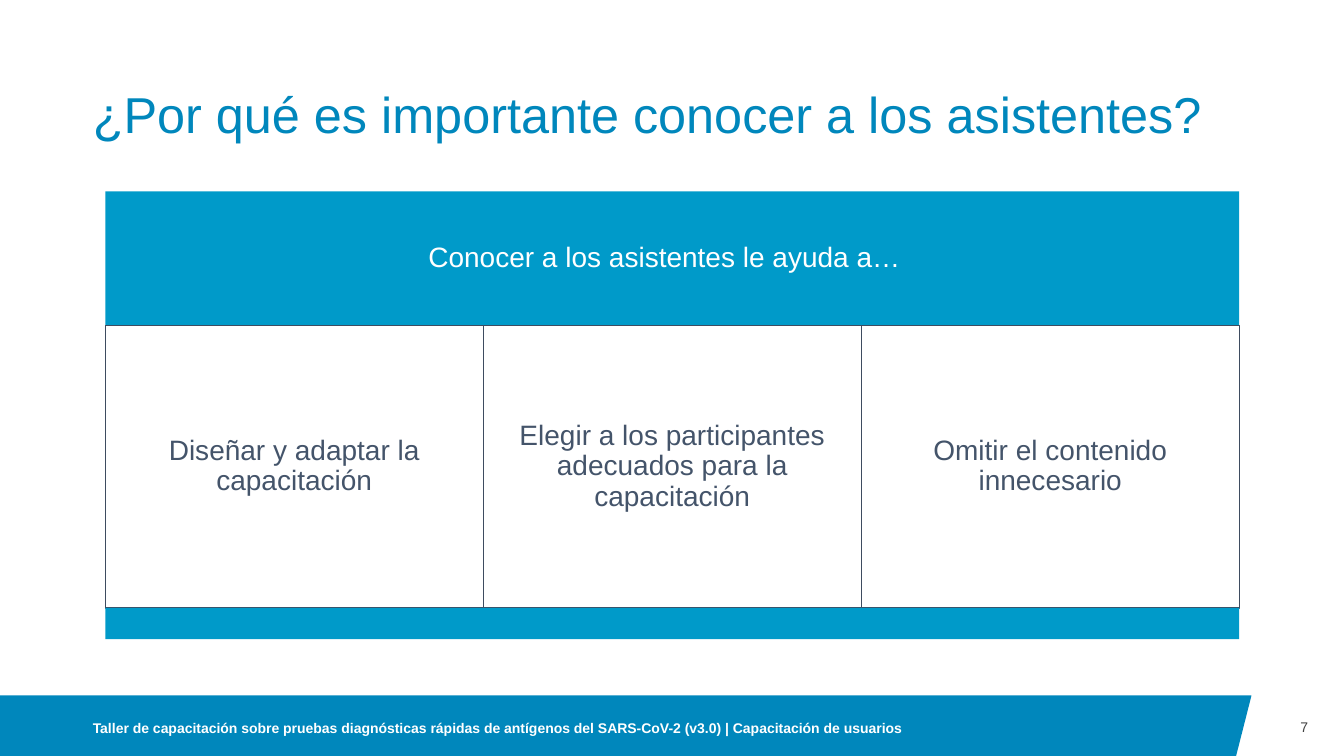
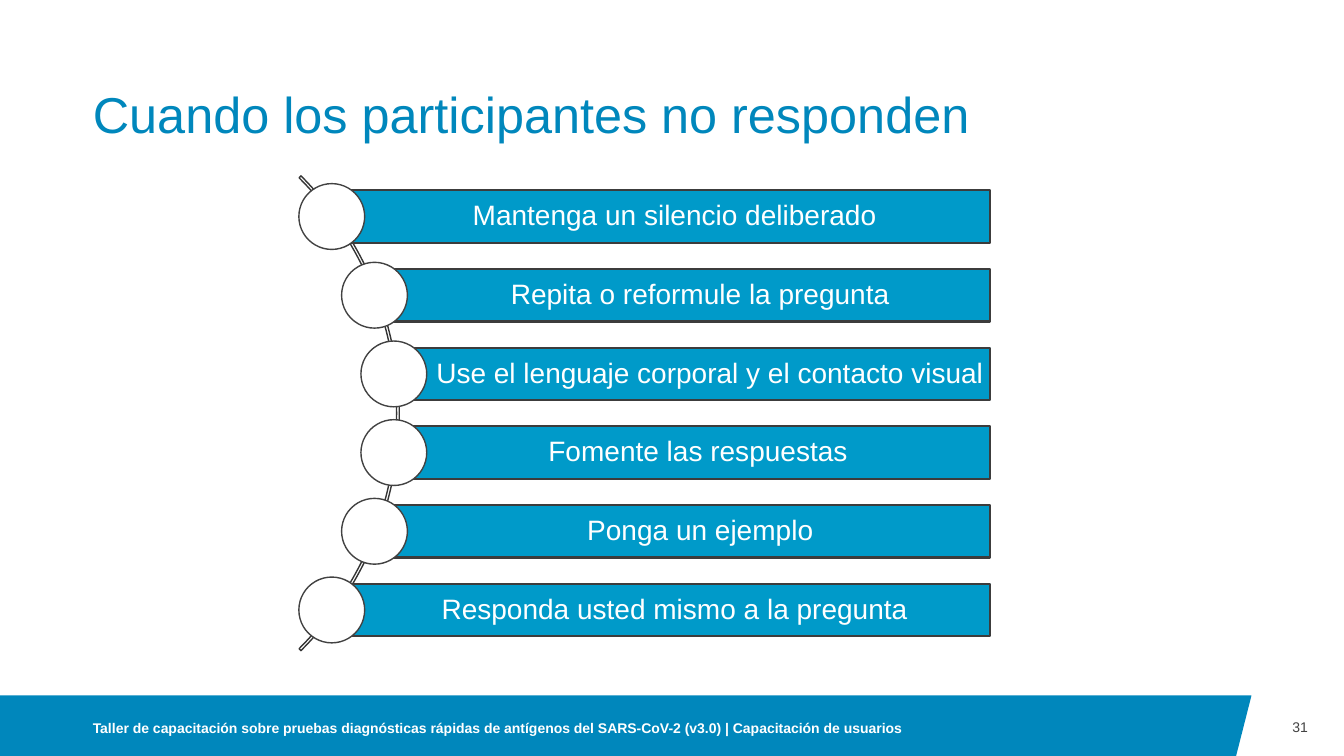
from math import sqrt

from pptx import Presentation
from pptx.dml.color import RGBColor
from pptx.enum.shapes import MSO_SHAPE
from pptx.enum.text import MSO_ANCHOR, PP_ALIGN
from pptx.util import Pt

# Shared style
FONT = "Arial"
BAND_BLUE = RGBColor(0x00, 0x87, 0xBC)
BOX_BLUE = RGBColor(0x00, 0x9A, 0xC9)
WHITE = RGBColor(0xFF, 0xFF, 0xFF)
SLATE = RGBColor(0x44, 0x54, 0x6A)
CELL_LINE = RGBColor(0x3E, 0x4C, 0x60)
BAR_LINE = RGBColor(0x3C, 0x3C, 0x3C)
ARC_LINE = RGBColor(0x35, 0x35, 0x35)
GRAY = RGBColor(0x42, 0x42, 0x42)
FOOTER = (
    "Taller de capacitación sobre pruebas diagnósticas rápidas de antígenos "
    "del SARS-CoV-2 (v3.0) | Capacitación de usuarios"
)
SLIDE_WIDTH, SLIDE_HEIGHT = 960, 540
LEFT_MARGIN = 66.3
BAND_TOP, BAND_RIGHT = 496.8, 894


def write_text(shape, text, size=20, color=WHITE, bold=False,
               align=PP_ALIGN.CENTER, anchor=MSO_ANCHOR.MIDDLE,
               spacing=0.9, margins=(0, 0, 0, 0)):
    """Fill a shape with one formatted paragraph; margins go left, top, right, bottom."""
    frame = shape.text_frame
    frame.word_wrap = True
    frame.vertical_anchor = anchor
    (frame.margin_left, frame.margin_top,
     frame.margin_right, frame.margin_bottom) = map(Pt, margins)
    paragraph = frame.paragraphs[0]
    paragraph.alignment = align
    paragraph.line_spacing = spacing
    run = paragraph.add_run()
    run.text = text
    run.font.name = FONT
    run.font.size = Pt(size)
    run.font.bold = bold
    run.font.color.rgb = color


def paint(shape, fill=None, line=None, line_width=1):
    shape.shadow.inherit = False
    if fill is None:
        shape.fill.background()
    else:
        shape.fill.solid()
        shape.fill.fore_color.rgb = fill
    if line is None:
        shape.line.fill.background()
    else:
        shape.line.color.rgb = line
        shape.line.width = Pt(line_width)


def add_figure(slide, kind, left, top, width, height, **style):
    shape = slide.shapes.add_shape(kind, Pt(left), Pt(top), Pt(width), Pt(height))
    paint(shape, **style)
    return shape


def add_label(slide, text, left, top, width, height, **text_format):
    label = slide.shapes.add_textbox(Pt(left), Pt(top), Pt(width), Pt(height))
    write_text(label, text, spacing=1.0, **text_format)


def prepare_layout(presentation):
    """Place the title on the title-only layout for every slide."""
    layout = presentation.slide_layouts.get_by_name("Title Only")
    title = layout.placeholders[0]
    title.left, title.top = Pt(LEFT_MARGIN), Pt(28.8)
    title.width, title.height = Pt(828), Pt(74.2)
    return layout


def add_band(slide):
    builder = slide.shapes.build_freeform(0, Pt(BAND_TOP))
    builder.add_line_segments([
        (Pt(BAND_RIGHT), Pt(BAND_TOP)),
        (Pt(883), Pt(SLIDE_HEIGHT)),
        (0, Pt(SLIDE_HEIGHT)),
    ])
    paint(builder.convert_to_shape(), fill=BAND_BLUE)


def add_base_slide(presentation, layout, title, number):
    slide = presentation.slides.add_slide(layout)
    write_text(slide.shapes.title, title, size=36, color=BAND_BLUE,
               align=PP_ALIGN.LEFT, anchor=MSO_ANCHOR.BOTTOM)
    add_band(slide)
    add_label(slide, FOOTER, LEFT_MARGIN, 500.4, 628.6, 39.6,
              size=10, bold=True, align=PP_ALIGN.LEFT)
    add_label(slide, str(number), BAND_RIGHT, BAND_TOP, 40.3, 45.2,
              size=10, color=GRAY, align=PP_ALIGN.RIGHT)
    return slide


def add_column_panel(slide, heading, columns):
    """Heading bar, equal columns below it and a closing strip."""
    left, top, width = 75.2, 136.8, 810
    heading_height, column_height, strip_height = 95.8, 201.6, 22.4
    column_top = top + heading_height
    column_width = width / len(columns)

    header = add_figure(slide, MSO_SHAPE.RECTANGLE, left, top, width,
                        heading_height, fill=BOX_BLUE)
    write_text(header, heading, margins=(6, 6, 17, 6))
    for index, text in enumerate(columns):
        cell = add_figure(slide, MSO_SHAPE.RECTANGLE, left + index * column_width,
                          column_top, column_width, column_height,
                          fill=WHITE, line=CELL_LINE)
        write_text(cell, text, color=SLATE, margins=(6, 6, 6, 6))
    add_figure(slide, MSO_SHAPE.RECTANGLE, left, column_top + column_height,
               width, strip_height, fill=BOX_BLUE)


def add_curved_list(slide, items):
    """Bars that start on a circular arc; each item is text and right inset."""
    center_x, center_y, arc_radius, bar_radius = 45.4, 295.2, 239.8, 237.6
    bar_right, bar_height, pitch, dot = 707.4, 37.5, 56.2, 47

    arc = add_figure(slide, MSO_SHAPE.BLOCK_ARC, center_x - arc_radius,
                     center_y - arc_radius, 2 * arc_radius, 2 * arc_radius,
                     line=ARC_LINE)
    # From 315 to 45 degrees, as a thin ring
    for index, value in enumerate((189, 27, 0.004)):
        arc.adjustments[index] = value

    for index, (text, right_inset) in enumerate(items):
        offset = (index - (len(items) - 1) / 2) * pitch
        left = center_x + sqrt(bar_radius ** 2 - offset ** 2)
        middle = center_y + offset
        bar = add_figure(slide, MSO_SHAPE.RECTANGLE, left, middle - bar_height / 2,
                         bar_right - left, bar_height,
                         fill=BOX_BLUE, line=BAR_LINE, line_width=1.5)
        write_text(bar, text, margins=(29.5, 4, right_inset, 4))
        add_figure(slide, MSO_SHAPE.OVAL, left - dot / 2, middle - dot / 2,
                   dot, dot, fill=WHITE, line=GRAY)


def main():
    presentation = Presentation()
    presentation.slide_width = Pt(SLIDE_WIDTH)
    presentation.slide_height = Pt(SLIDE_HEIGHT)
    layout = prepare_layout(presentation)

    # Reasons to know the audience
    slide = add_base_slide(presentation, layout,
                           "¿Por qué es importante conocer a los asistentes?", 7)
    add_column_panel(slide, "Conocer a los asistentes le ayuda a…", [
        "Diseñar y adaptar la capacitación",
        "Elegir a los participantes adecuados para la capacitación",
        "Omitir el contenido innecesario",
    ])

    # Ways to react to silence
    slide = add_base_slide(presentation, layout,
                           "Cuando los participantes no responden", 31)
    add_curved_list(slide, [
        ("Mantenga un silencio deliberado", 10),
        ("Repita o reformule la pregunta", 4),
        ("Use el lenguaje corporal y el contacto visual", 4),
        ("Fomente las respuestas", 21),
        ("Ponga un ejemplo", 4),
        ("Responda usted mismo a la pregunta", 10),
    ])

    presentation.save("out.pptx")


if __name__ == "__main__":
    main()
